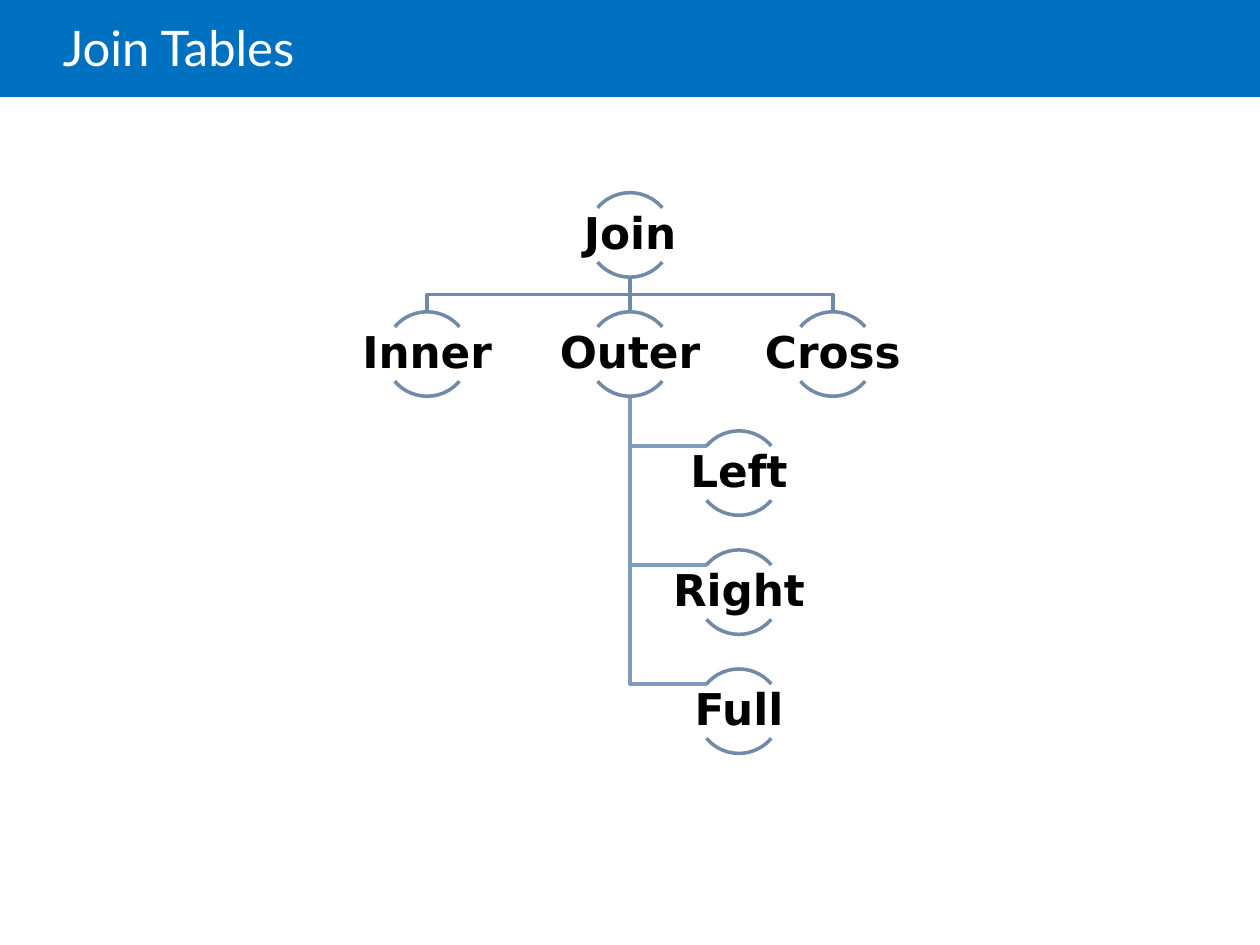
"""Build the Join Tables slide with its hierarchy of join types."""
from pptx import Presentation
from pptx.dml.color import RGBColor
from pptx.enum.shapes import MSO_CONNECTOR, MSO_SHAPE
from pptx.enum.text import MSO_ANCHOR, PP_ALIGN
from pptx.oxml.ns import qn
from pptx.util import Inches, Pt
from lxml.etree import SubElement

TITLE = "Join Tables"
ROOT = "Join"
JOIN_TYPES = ["Inner", "Outer", "Cross"]
OUTER_TYPES = ["Left", "Right", "Full"]

BLUE = RGBColor(0x00, 0x70, 0xC0)
WHITE = RGBColor(0xFF, 0xFF, 0xFF)
BLACK = RGBColor(0x00, 0x00, 0x00)
SLATE = RGBColor(0x71, 0x8A, 0xA7)
LIGHT_SLATE = RGBColor(0x80, 0x9C, 0xBD)

CENTER_X = 5
COLUMN_STEP = 1.61
OUTER_INDENT = 0.865
FIRST_TOP = 1.53
ROW_STEP = 0.945
DIAMETER = 0.67
LABEL_WIDTH, LABEL_HEIGHT, LABEL_OFFSET = 1.33, 0.43, 0.12
BRANCH_LENGTH = 0.61
ARC_ANGLES = [(132, 192), (24, 84)]


def row_top(row):
    return FIRST_TOP + row * ROW_STEP


def row_bottom(row):
    return row_top(row) + DIAMETER


def style_line(shape, color):
    shape.line.color.rgb = color
    shape.line.width = Pt(2)


def add_text(slide, text, box, margins, font, size, color, spacing, align, bold=False):
    label = slide.shapes.add_textbox(*map(Inches, box))
    frame = label.text_frame
    frame.word_wrap = True
    frame.vertical_anchor = MSO_ANCHOR.MIDDLE
    (frame.margin_left, frame.margin_top,
     frame.margin_right, frame.margin_bottom) = map(Inches, margins)
    frame.text = text
    paragraph = frame.paragraphs[0]
    paragraph.alignment = align
    paragraph.line_spacing = spacing
    run_font = paragraph.runs[0].font
    run_font.name, run_font.size, run_font.bold = font, Pt(size), bold
    run_font.color.rgb = color


def add_elbow(slide, points, color):
    start, *rest = [(Inches(x), Inches(y)) for x, y in points]
    builder = slide.shapes.build_freeform(*start)
    builder.add_line_segments(rest, close=False)
    elbow = builder.convert_to_shape()
    elbow.shadow.inherit = False
    elbow.fill.background()
    style_line(elbow, color)


def add_stem(slide, x, top, bottom):
    stem = slide.shapes.add_connector(
        MSO_CONNECTOR.STRAIGHT, Inches(x), Inches(top), Inches(x), Inches(bottom))
    style_line(stem, SLATE)
    SubElement(stem._element.spPr, qn("a:effectLst"))


def add_node(slide, text, x, row):
    top = row_top(row)
    for angles in ARC_ANGLES:
        arc = slide.shapes.add_shape(
            MSO_SHAPE.ARC, Inches(x - DIAMETER / 2), Inches(top),
            Inches(DIAMETER), Inches(DIAMETER))
        arc.adjustments[0], arc.adjustments[1] = angles
        arc.shadow.inherit = False
        arc.fill.background()
        style_line(arc, SLATE)
    box = (x - LABEL_WIDTH / 2, top + LABEL_OFFSET, LABEL_WIDTH, LABEL_HEIGHT)
    add_text(slide, text, box, [0.02] * 4, "DejaVu Sans", 25, BLACK, 0.9,
             PP_ALIGN.CENTER, bold=True)


def main():
    deck = Presentation()
    deck.slide_width, deck.slide_height = Inches(10), Inches(7.5)
    slide = deck.slides.add_slide(deck.slide_layouts[6])

    banner = slide.shapes.add_shape(MSO_SHAPE.RECTANGLE, 0, 0, Inches(10), Inches(0.77))
    banner.shadow.inherit = False
    banner.fill.solid()
    banner.fill.fore_color.rgb = BLUE
    banner.line.fill.background()
    add_text(slide, TITLE, (0.5, 0, 8.5, 0.81), (0, 0.05, 0.1, 0.05),
             "Lato", 28, WHITE, 0.85, PP_ALIGN.LEFT)

    type_nodes = [(text, CENTER_X + (column - 1) * COLUMN_STEP, 1)
                  for column, text in enumerate(JOIN_TYPES)]
    outer_nodes = [(text, CENTER_X + OUTER_INDENT, row)
                   for row, text in enumerate(OUTER_TYPES, start=2)]

    for _, _, row in reversed(outer_nodes):
        branch_y = row_top(row) + LABEL_OFFSET
        add_elbow(slide, [(CENTER_X, row_bottom(1)), (CENTER_X, branch_y),
                          (CENTER_X + BRANCH_LENGTH, branch_y)], LIGHT_SLATE)

    start_y, end_y = row_bottom(0), row_top(1)
    middle_y = (start_y + end_y) / 2
    for _, x, _ in type_nodes:
        if x == CENTER_X:
            add_stem(slide, x, start_y, end_y)
        else:
            add_elbow(slide, [(CENTER_X, start_y), (CENTER_X, middle_y),
                              (x, middle_y), (x, end_y)], SLATE)

    for node in [(ROOT, CENTER_X, 0), *type_nodes, *outer_nodes]:
        add_node(slide, *node)

    deck.save("out.pptx")


if __name__ == "__main__":
    main()
